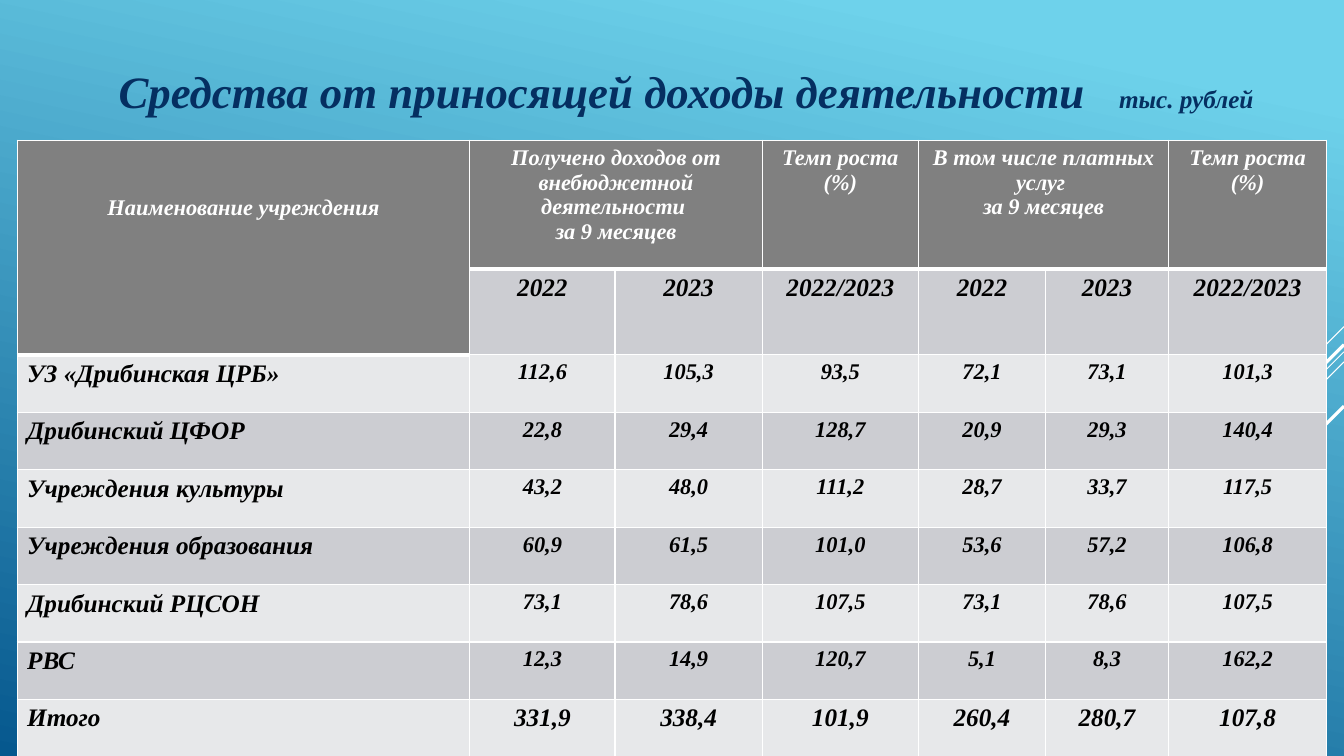
"""Build the slide on income from paid activities."""
from dataclasses import dataclass
from typing import NamedTuple

from lxml.etree import SubElement as Sub
from pptx import Presentation
from pptx.dml.color import RGBColor as Rgb
from pptx.enum.shapes import MSO_CONNECTOR as Link
from pptx.enum.text import MSO_ANCHOR as Anchor, MSO_AUTO_SIZE as Fit, PP_ALIGN as Align
from pptx.oxml.ns import qn
from pptx.slide import Slide
from pptx.table import _Cell as Cell
from pptx.util import Inches, Pt


@dataclass(frozen=True)
class Theme:
    font: str = "Times New Roman"
    sky: str = "6ED2EB"
    deep: str = "06588E"
    navy: str = "052F61"
    white: str = "FFFFFF"
    black: str = "000000"
    head: str = "808080"
    dark: str = "CCCDD2"
    light: str = "E7E8EA"
    title: int = 32
    large: int = 18
    small: int = 16
    thin: float = 1
    thick: float = 3


class Ray(NamedTuple):
    top: float
    reach: float
    width: float


class Look(NamedTuple):
    fill: str
    ink: str
    size: int
    align: Align


THEME = Theme()
WIDE, HIGH = 13.33, 7.5
RAYS = [
    Ray(3.24, 1, 0.75),
    Ray(3.49, 3.26, 0.75),
    Ray(3.59, 2.07, 0.75),
    Ray(3.42, 1.91, 2.25),
    Ray(4.03, 1.39, 2.25),
]
COLS = [4.49, 1.44, 1.46, 1.55, 1.26, 1.22, 1.57]
TALL = [1.28, 0.85] + [0.57] * 7
SPANS = [((0, 0), (1, 0)), ((0, 1), (0, 2)), ((0, 4), (0, 5))]
RATE = "Темп роста (%)"
YEARS = ["2022", "2023", "2022/2023"]
ROWS = [
    ["Наименование учреждения",
     "Получено доходов от внебюджетной деятельности \nза 9 месяцев", "", RATE,
     "В том числе платных услуг \nза 9 месяцев", "", RATE],
    ["", *YEARS, *YEARS],
    ["УЗ «Дрибинская ЦРБ»", "112,6", "105,3", "93,5", "72,1", "73,1", "101,3"],
    ["Дрибинский ЦФОР", "22,8", "29,4", "128,7", "20,9", "29,3", "140,4"],
    ["Учреждения культуры", "43,2", "48,0", "111,2", "28,7", "33,7", "117,5"],
    ["Учреждения образования", "60,9", "61,5", "101,0", "53,6", "57,2", "106,8"],
    ["Дрибинский РЦСОН", "73,1", "78,6", "107,5", "73,1", "78,6", "107,5"],
    ["РВС", "12,3", "14,9", "120,7", "5,1", "8,3", "162,2"],
    ["Итого", "331,9", "338,4", "101,9", "260,4", "280,7", "107,8"],
]


def style(font, size: int, ink: str) -> None:
    font.name, font.size = THEME.font, Pt(size)
    font.bold = font.italic = True
    font.color.rgb = Rgb.from_string(ink)


def paint(slide: Slide) -> None:
    fill = slide.background.fill
    fill.gradient()
    fill.gradient_angle = 258
    for stop, hue, place in zip(fill.gradient_stops, (THEME.sky, THEME.deep), (0.1, 1)):
        stop.color.rgb = Rgb.from_string(hue)
        stop.position = place


def add_title(slide: Slide) -> None:
    box = slide.shapes.title
    box.left, box.top, box.width, box.height = map(Inches, (0.75, 0.14, 12, 1.52))
    frame = box.text_frame
    frame.auto_size, frame.word_wrap = Fit.NONE, True
    frame.vertical_anchor = Anchor.MIDDLE
    frame.margin_left = Inches(0.21)
    line = frame.paragraphs[0]
    line.alignment = Align.CENTER
    parts = [("Средства от приносящей доходы деятельности", THEME.title),
             (" ", THEME.title), ("тыс. рублей", THEME.large)]
    for text, size in parts:
        run = line.add_run()
        run.text = text
        style(run.font, size, THEME.navy)
    line.runs[1].font._element.set("spc", "1600")


def add_ray(slide: Slide, ray: Ray) -> None:
    ends = (WIDE, ray.top, WIDE - ray.reach, ray.top + ray.reach)
    line = slide.shapes.add_connector(Link.STRAIGHT, *map(Inches, ends))
    line.line.color.rgb = Rgb.from_string(THEME.white)
    line.line.width = Pt(ray.width)
    Sub(line._element.spPr, qn("a:effectLst"))


def is_head(row: int, col: int) -> bool:
    return row == 0 or (row == 1 and col == 0)


def pick(row: int, col: int) -> Look:
    if is_head(row, col):
        return Look(THEME.head, THEME.white, THEME.small, Align.CENTER)
    fill = THEME.dark if row % 2 else THEME.light
    large = col == 0 or row in (1, len(ROWS) - 1)
    return Look(fill, THEME.black, THEME.large if large else THEME.small,
                Align.CENTER if col else Align.LEFT)


def edge(cell: Cell, row: int, col: int) -> None:
    head = is_head(row, col)
    above = row > 0 and is_head(row - 1, col) and not head
    below = head and not is_head(row + 1, col)
    sides = {"L": False, "R": False, "T": above, "B": below}
    for side, bold in sides.items():
        width = Pt(THEME.thick if bold else THEME.thin)
        line = Sub(cell._tc.get_or_add_tcPr(), qn(f"a:ln{side}"), w=str(width))
        Sub(Sub(line, qn("a:solidFill")), qn("a:srgbClr"), val=THEME.white)


def fill_cell(cell: Cell, text: str, look: Look) -> None:
    cell.fill.solid()
    cell.fill.fore_color.rgb = Rgb.from_string(look.fill)
    if not text:
        return
    cell.text_frame.text = text
    for line in cell.text_frame.paragraphs:
        line.alignment = look.align
        for run in line.runs:
            style(run.font, look.size, look.ink)


def add_grid(slide: Slide) -> None:
    place = map(Inches, (0.17, 1.39, sum(COLS), sum(TALL)))
    grid = slide.shapes.add_table(len(ROWS), len(COLS), *place).table
    grid.first_row = grid.horz_banding = False
    for col, width in zip(grid.columns, COLS):
        col.width = Inches(width)
    for row, height in zip(grid.rows, TALL):
        row.height = Inches(height)
    for first, last in SPANS:
        grid.cell(*first).merge(grid.cell(*last))
    for i, row in enumerate(ROWS):
        for j, text in enumerate(row):
            cell = grid.cell(i, j)
            edge(cell, i, j)
            fill_cell(cell, text, pick(i, j))
    grid.cell(0, 0).margin_top = Inches(0.55)


def main() -> None:
    deck = Presentation()
    deck.slide_width, deck.slide_height = Inches(WIDE), Inches(HIGH)
    slide = deck.slides.add_slide(deck.slide_layouts[5])
    paint(slide)
    for ray in RAYS:
        add_ray(slide, ray)
    add_title(slide)
    add_grid(slide)
    deck.save("out.pptx")


if __name__ == "__main__":
    main()
